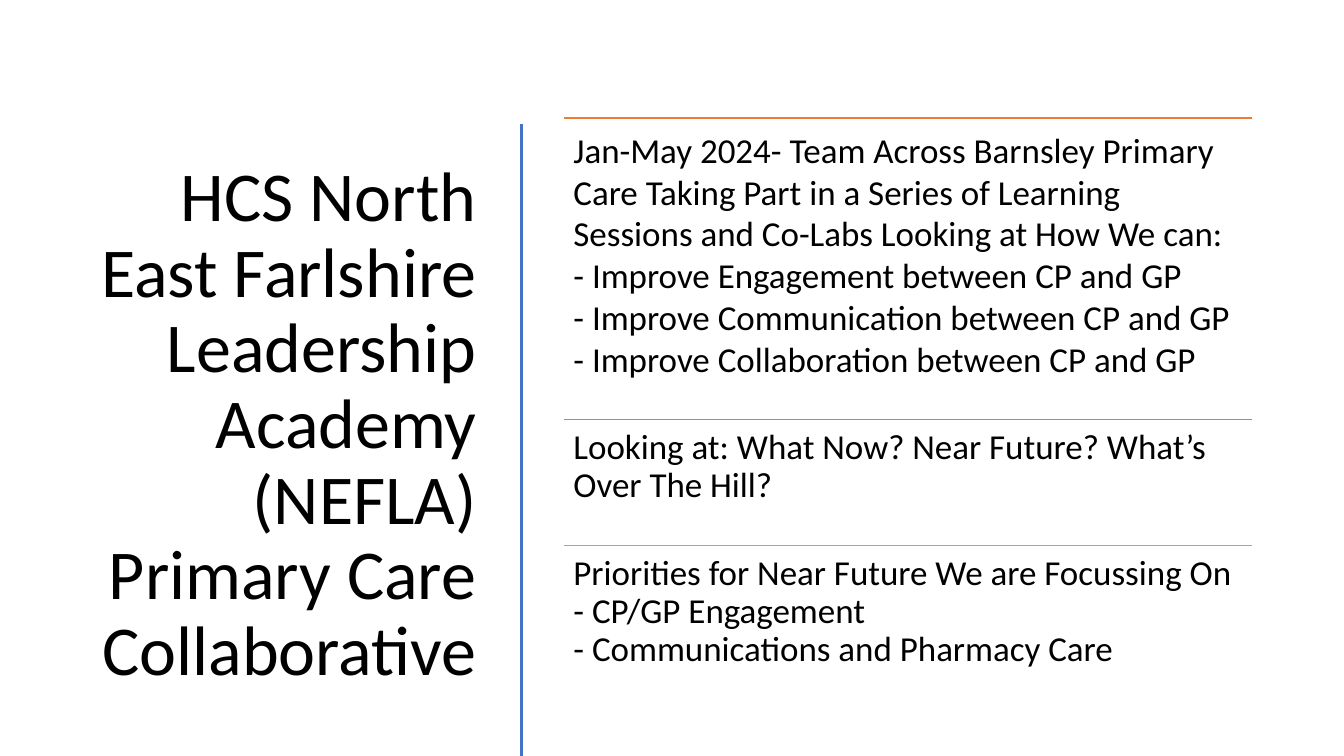
from pptx import Presentation
from pptx.dml.color import RGBColor
from pptx.enum.shapes import MSO_CONNECTOR as Connector
from pptx.enum.text import MSO_ANCHOR as Anchor, PP_ALIGN as Align
from pptx.oxml.ns import qn
from pptx.util import Inches, Pt
from lxml.etree import SubElement

BLACK = RGBColor(0x00, 0x00, 0x00)
BLUE = RGBColor(0x44, 0x72, 0xC4)
ORANGE = RGBColor(0xED, 0x7D, 0x31)
DUSTY_ROSE = RGBColor(0xC4, 0x81, 0x70)
GREY = RGBColor(0xA5, 0xA5, 0xA5)

HEADING = "HCS North East Farlshire Leadership Academy (NEFLA) Primary Care Collaborative"
PROGRAMME = [
    "Jan-May 2024- Team Across Barnsley Primary Care Taking Part in a Series of "
    "Learning Sessions and Co-Labs Looking at How We can:\n"
    "- Improve Engagement between CP and GP\n"
    "- Improve Communication between CP and GP\n"
    "- Improve Collaboration between CP and GP"
]
HORIZONS = ["Looking at: What Now? Near Future? What’s Over The Hill?"]
PRIORITIES = [
    "Priorities for Near Future We are Focussing On",
    "- CP/GP Engagement",
    "- Communications and Pharmacy Care",
]


def write(frame, paragraphs, size=25, color=BLACK, font="Calibri", align=Align.LEFT,
          anchor=Anchor.TOP, spacing=0.9, after=0, inset=0.1):
    """Fill a text frame with formatted paragraphs."""
    frame.word_wrap = True
    frame.vertical_anchor = anchor
    frame.margin_left = frame.margin_right = Inches(0.1)
    frame.margin_top = frame.margin_bottom = Inches(inset)
    for index, wording in enumerate(paragraphs):
        paragraph = frame.add_paragraph() if index else frame.paragraphs[0]
        paragraph.text = wording
        paragraph.alignment = align
        paragraph.line_spacing = spacing
        paragraph.space_before, paragraph.space_after = Pt(0), Pt(after)
        for run in paragraph.runs:
            run.font.size, run.font.name = Pt(size), font
            run.font.color.rgb = color


class Page:
    """Draws on one slide, with lengths in percent of its width and height."""

    def __init__(self, deck):
        self.deck = deck
        self.slide = deck.slides.add_slide(deck.slide_layouts[5])

    def place(self, x, y):
        return int(self.deck.slide_width * x / 100), int(self.deck.slide_height * y / 100)

    def title(self, x, y, width, height, wording, **style):
        heading = self.slide.shapes.title
        heading.left, heading.top = self.place(x, y)
        heading.width, heading.height = self.place(width, height)
        write(heading.text_frame, [wording], **style)

    def text(self, x, y, width, height, paragraphs, **style):
        box = self.slide.shapes.add_textbox(*self.place(x, y), *self.place(width, height))
        write(box.text_frame, paragraphs, **style)

    def rule(self, x1, y1, x2, y2, color, weight=1):
        rule = self.slide.shapes.add_connector(
            Connector.STRAIGHT, *self.place(x1, y1), *self.place(x2, y2))
        rule.line.color.rgb = color
        rule.line.width = Pt(weight)
        SubElement(rule._element.spPr, qn("a:effectLst"))


def main():
    deck = Presentation()
    deck.slide_width, deck.slide_height = Inches(13.33), Inches(7.5)
    page = Page(deck)
    page.title(3.9, 15.6, 32.33, 81.47, HEADING, size=50, align=Align.RIGHT,
               anchor=Anchor.MIDDLE, inset=0.05)
    page.rule(38.78, 16.4, 38.78, 99.95, BLUE, weight=2)

    left, width = 41.93, 51.22
    sections = [
        (15.6, 39.87, ORANGE, PROGRAMME, {"spacing": 1.0, "after": 15}),
        (55.47, 16.66, DUSTY_ROSE, HORIZONS, {"after": 8.75}),
        (72.13, 25.07, GREY, PRIORITIES, {}),
    ]
    for top, height, color, paragraphs, style in sections:
        page.rule(left, top, left + width, top, color)
        page.text(left, top, width, height, paragraphs, **style)
    deck.save("out.pptx")


if __name__ == "__main__":
    main()
